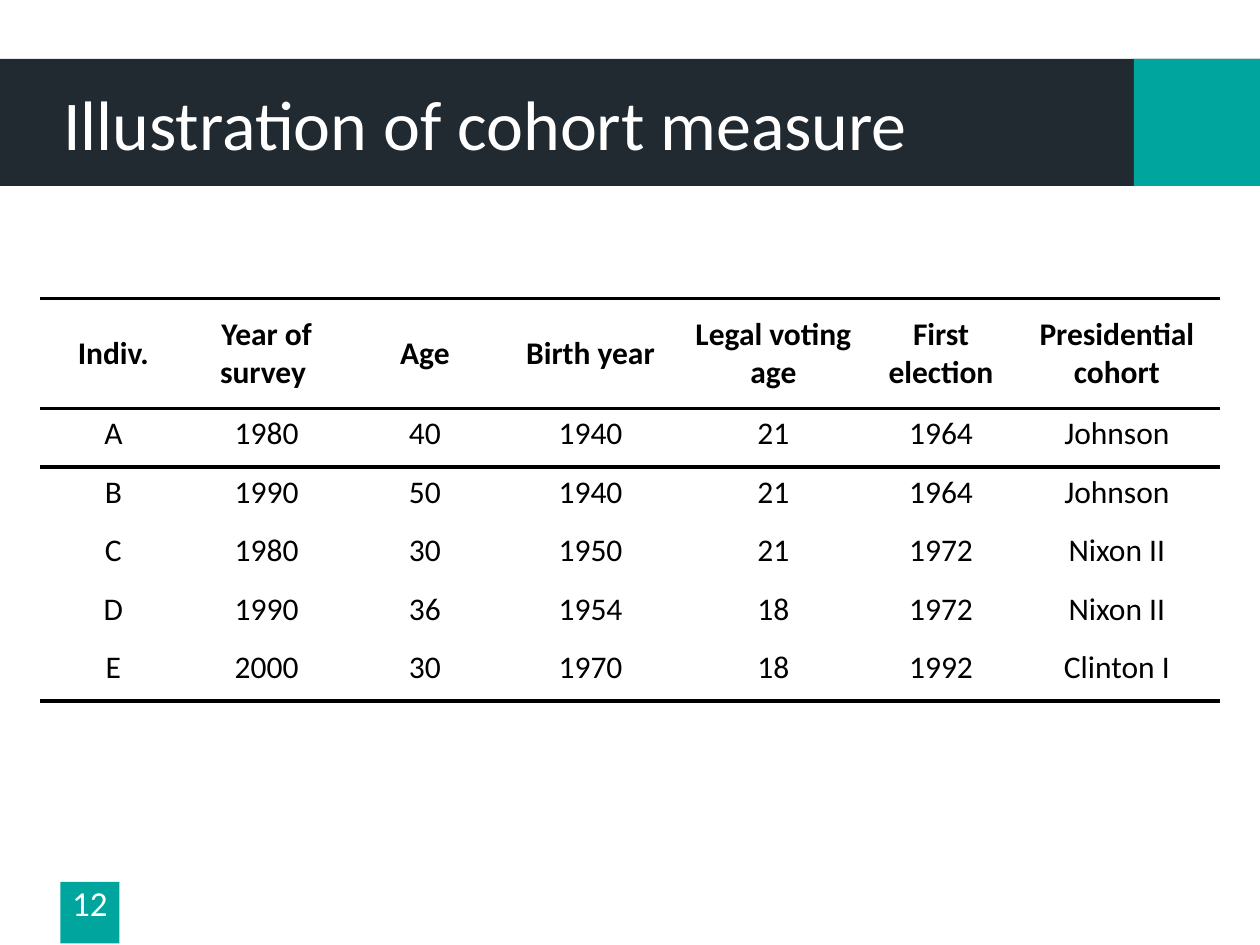
from dataclasses import dataclass

from lxml import etree
from pptx import Presentation
from pptx.dml.color import RGBColor
from pptx.enum import shapes, text
from pptx.oxml.ns import qn
from pptx.util import Cm, Pt


@dataclass(frozen=True)
class Theme:
    font: str = "Calibri"
    dark: str = "202A30"
    accent: str = "00A69E"
    light: str = "FFFFFF"
    ink: str = "000000"
    title_size: int = 40
    number_size: int = 20
    table_size: int = 18
    rule_width: float = 2.25


THEME = Theme()
PLAIN_TABLE_STYLE = "{2D5ABB26-0587-4C30-8999-92F81FD0307C}"
BAND_TOP, BAND_HEIGHT = Cm(1.19), Cm(2.56)

HEADER = ["Indiv.", "Year of survey ", "Age", "Birth year",
          "Legal voting age", "First election", "Presidential cohort"]
ROWS = [
    ["A", "1980", "40", "1940", "21", "1964", "Johnson"],
    ["B", "1990", "50", "1940", "21", "1964", "Johnson"],
    ["C", "1980", "30", "1950", "21", "1972", "Nixon II"],
    ["D", "1990", "36", "1954", "18", "1972", "Nixon II"],
    ["E", "2000", "30", "1970", "18", "1992", "Clinton I"],
]
COLUMN_WIDTHS = [2.95, 3.23, 3.15, 3.53, 3.84, 2.92, 4.17]
HEADER_HEIGHT, ROW_HEIGHT = 2.21, 1.18


def write(tf, content, size, color, align, bold=False):
    tf.text = content
    p = tf.paragraphs[0]
    p.alignment = align
    for r in p.runs:
        r.font.name = THEME.font
        r.font.size = Pt(size)
        r.font.bold = bold
        r.font.color.rgb = RGBColor.from_string(color)


def clear_margins(tf):
    tf.margin_left = tf.margin_right = tf.margin_top = tf.margin_bottom = 0


def add_block(s, left, top, width, height, color):
    sp = s.shapes.add_shape(shapes.MSO_SHAPE.RECTANGLE, left, top, width, height)
    sp.shadow.inherit = False
    sp.fill.solid()
    sp.fill.fore_color.rgb = RGBColor.from_string(color)
    sp.line.fill.background()
    return sp


def add_title(s, content):
    sp = s.shapes.title
    sp.left, sp.top, sp.width, sp.height = Cm(1.27), BAND_TOP, Cm(22.86), BAND_HEIGHT
    tf = sp.text_frame
    clear_margins(tf)
    tf.vertical_anchor = text.MSO_ANCHOR.MIDDLE
    write(tf, content, THEME.title_size, THEME.light, text.PP_ALIGN.LEFT)
    # Bring the title in front of the band
    s.shapes._spTree.append(sp._element)


def add_page_number(s, number):
    sp = add_block(s, Cm(1.22), Cm(17.78), Cm(1.19), Cm(1.24), THEME.accent)
    tf = sp.text_frame
    clear_margins(tf)
    tf.vertical_anchor = text.MSO_ANCHOR.TOP
    write(tf, number, THEME.number_size, THEME.light, text.PP_ALIGN.CENTER)


def add_rule(cell, side):
    ln = etree.SubElement(cell._tc.get_or_add_tcPr(), qn(f"a:ln{side}"),
                          w=str(Pt(THEME.rule_width)))
    fill = etree.SubElement(ln, qn("a:solidFill"))
    etree.SubElement(fill, qn("a:srgbClr"), val=THEME.ink)


def add_cohort_table(s):
    data = [HEADER] + ROWS
    heights = [HEADER_HEIGHT] + [ROW_HEIGHT] * len(ROWS)
    frame = s.shapes.add_table(len(data), len(HEADER), Cm(0.81), Cm(6.02),
                               Cm(sum(COLUMN_WIDTHS)), Cm(sum(heights)))
    table = frame.table
    table.first_row = table.horz_banding = False
    table._tbl.tblPr.find(qn("a:tableStyleId")).text = PLAIN_TABLE_STYLE
    for column, width in zip(table.columns, COLUMN_WIDTHS):
        column.width = Cm(width)

    # Rules above and below the header, and below the last row
    sides = {0: "TB", 1: "T", len(ROWS): "B"}
    for i, values in enumerate(data):
        table.rows[i].height = Cm(heights[i])
        is_header = i == 0
        for j, value in enumerate(values):
            cell = table.cell(i, j)
            cell.vertical_anchor = (text.MSO_ANCHOR.MIDDLE if is_header
                                    else text.MSO_ANCHOR.TOP)
            write(cell.text_frame, value, THEME.table_size, THEME.ink,
                  text.PP_ALIGN.CENTER, bold=is_header)
            for side in sides.get(i, ""):
                add_rule(cell, side)
            cell.fill.background()


def main():
    prs = Presentation()
    prs.slide_width, prs.slide_height = Cm(25.4), Cm(19.05)
    s = prs.slides.add_slide(prs.slide_layouts[5])

    # Title band with accent end
    add_block(s, 0, BAND_TOP, prs.slide_width, BAND_HEIGHT, THEME.dark)
    add_block(s, Cm(22.86), BAND_TOP, Cm(2.54), BAND_HEIGHT, THEME.accent)
    add_title(s, "Illustration of cohort measure")

    # Page number and table
    add_page_number(s, "12")
    add_cohort_table(s)

    prs.save("out.pptx")


if __name__ == "__main__":
    main()
